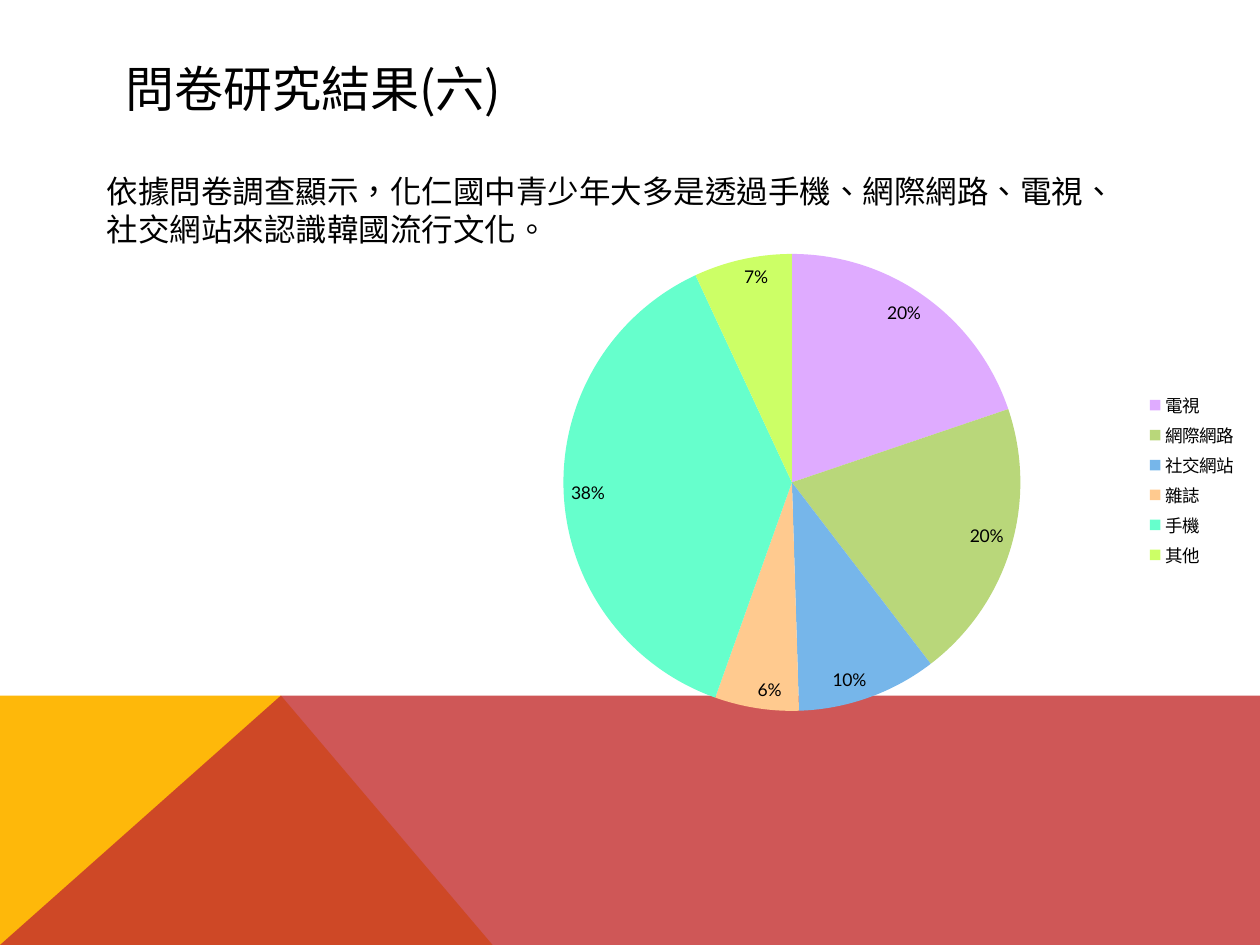
from dataclasses import dataclass

from lxml import etree
from pptx import Presentation
from pptx.chart.data import CategoryChartData
from pptx.dml.color import RGBColor
from pptx.enum.chart import XL_CHART_TYPE, XL_LABEL_POSITION, XL_LEGEND_POSITION
from pptx.enum.text import MSO_ANCHOR
from pptx.oxml import parse_xml
from pptx.oxml.ns import nsdecls, qn
from pptx.slide import Slide
from pptx.util import Inches, Pt

PIE = XL_CHART_TYPE.PIE
LEGEND_RIGHT = XL_LEGEND_POSITION.RIGHT
INSIDE_END = XL_LABEL_POSITION.INSIDE_END
TOP, MIDDLE = MSO_ANCHOR.TOP, MSO_ANCHOR.MIDDLE


@dataclass(frozen=True)
class Theme:
    text: str = "000000"
    gold: str = "FEB80A"
    red: str = "C32D2E"
    text_font: str = "Noto Sans CJK SC"
    chart_font: str = "Lato"
    title_size: int = 28
    body_size: int = 18
    body_leading: int = 22
    chart_size: int = 10


@dataclass(frozen=True)
class Band:
    points: tuple[tuple[float, float], ...]
    color: str
    opacity: int = 100


@dataclass(frozen=True)
class TextBlock:
    text: str
    box: tuple[float, float, float, float]
    size: int
    anchor: MSO_ANCHOR
    leading: int | None = None


@dataclass(frozen=True)
class Slice:
    name: str
    value: int
    color: str


THEME = Theme()
WIDTH, HEIGHT = 10, 7.5
BAND_TOP, PEAK = 5.52, 2.23

BANDS = (
    Band(((0, HEIGHT), (0, BAND_TOP), (PEAK, BAND_TOP), (3.91, HEIGHT)), THEME.gold),
    Band(((0, HEIGHT), (PEAK, BAND_TOP), (WIDTH, BAND_TOP), (WIDTH, HEIGHT)), THEME.red, 80),
)
TITLE = TextBlock("問卷研究結果(六)", (0.9, 0.4, 8.22, 0.6), THEME.title_size, MIDDLE)
FINDING = TextBlock(
    "依據問卷調查顯示，化仁國中青少年大多是透過手機、網際網路、電視、社交網站來認識韓國流行文化。",
    (0.75, 1.31, 8.19, 0.71), THEME.body_size, TOP, THEME.body_leading,
)
SLICES = (
    Slice("電視", 20, "DFABFF"),
    Slice("網際網路", 20, "B9D77A"),
    Slice("社交網站", 10, "76B6EA"),
    Slice("雜誌", 6, "FFCA8F"),
    Slice("手機", 38, "66FFCC"),
    Slice("其他", 7, "CCFF66"),
)
CHART_BOX = (3.43, 1.86, 6.49, 3.9)
PLOT_LAYOUT = {"x": 0.16, "y": 0.04, "w": 0.56, "h": 0.93}  # shares of the chart box


def add_band(slide: Slide, band: Band) -> None:
    start, *others = [(Inches(x), Inches(y)) for x, y in band.points]
    builder = slide.shapes.build_freeform(*start)
    builder.add_line_segments(others, close=True)
    shape = builder.convert_to_shape()
    shape.shadow.inherit = False
    shape.fill.solid()
    shape.fill.fore_color.rgb = RGBColor.from_string(band.color)
    shape.line.fill.background()
    if band.opacity < 100:
        color = shape.fill._xPr.find(f"{qn('a:solidFill')}/{qn('a:srgbClr')}")
        etree.SubElement(color, qn("a:alpha"), val=str(band.opacity * 1000))


def add_text(slide: Slide, block: TextBlock) -> None:
    frame = slide.shapes.add_textbox(*map(Inches, block.box)).text_frame
    frame.word_wrap = True
    frame.vertical_anchor = block.anchor
    paragraph = frame.paragraphs[0]
    if block.leading:
        paragraph.line_spacing = Pt(block.leading)
    run = paragraph.add_run()
    run.text = block.text
    run.font.size = Pt(block.size)
    run.font.color.rgb = RGBColor.from_string(THEME.text)
    run.font.name = THEME.text_font
    # East Asian glyphs take their own typeface and language
    properties = run._r.get_or_add_rPr()
    properties.set("lang", "zh-TW")
    etree.SubElement(properties, qn("a:ea"), typeface=THEME.text_font)


def add_pie(slide: Slide, slices: tuple[Slice, ...]) -> None:
    data = CategoryChartData()
    data.categories = [item.name for item in slices]
    data.add_series("Series 1", [item.value for item in slices])
    chart = slide.shapes.add_chart(PIE, *map(Inches, CHART_BOX), data).chart
    chart.has_title = False
    chart.font.name = THEME.chart_font
    chart.font.size = Pt(THEME.chart_size)
    chart.font.color.rgb = RGBColor.from_string(THEME.text)
    chart.has_legend = True
    chart.legend.position = LEGEND_RIGHT
    chart.legend.include_in_layout = False

    # Slice colours and percentages
    plot = chart.plots[0]
    plot.vary_by_categories = True
    for index, item in enumerate(slices):
        fill = plot.series[0].points[index].format.fill
        fill.solid()
        fill.fore_color.rgb = RGBColor.from_string(item.color)
    plot.has_data_labels = True
    labels = plot.data_labels
    labels.show_percentage = True
    labels.show_value = False
    labels.number_format = "0%"
    labels.number_format_is_linked = False
    labels.position = INSIDE_END

    # Fixed place of the pie inside the chart
    sizes = "".join(f'<c:{key} val="{share}"/>' for key, share in PLOT_LAYOUT.items())
    layout = parse_xml(
        f'<c:layout {nsdecls("c")}><c:manualLayout><c:layoutTarget val="inner"/>'
        f'<c:xMode val="edge"/><c:yMode val="edge"/>{sizes}</c:manualLayout></c:layout>'
    )
    plot_area = chart._chartSpace.chart.plotArea
    for automatic in plot_area.findall(qn("c:layout")):
        plot_area.remove(automatic)
    plot_area.insert(0, layout)


def main() -> None:
    presentation = Presentation()
    presentation.slide_width = Inches(WIDTH)
    presentation.slide_height = Inches(HEIGHT)
    slide = presentation.slides.add_slide(presentation.slide_layouts[6])
    for band in BANDS:
        add_band(slide, band)
    add_text(slide, TITLE)
    add_pie(slide, SLICES)
    add_text(slide, FINDING)
    presentation.save("out.pptx")


if __name__ == "__main__":
    main()
